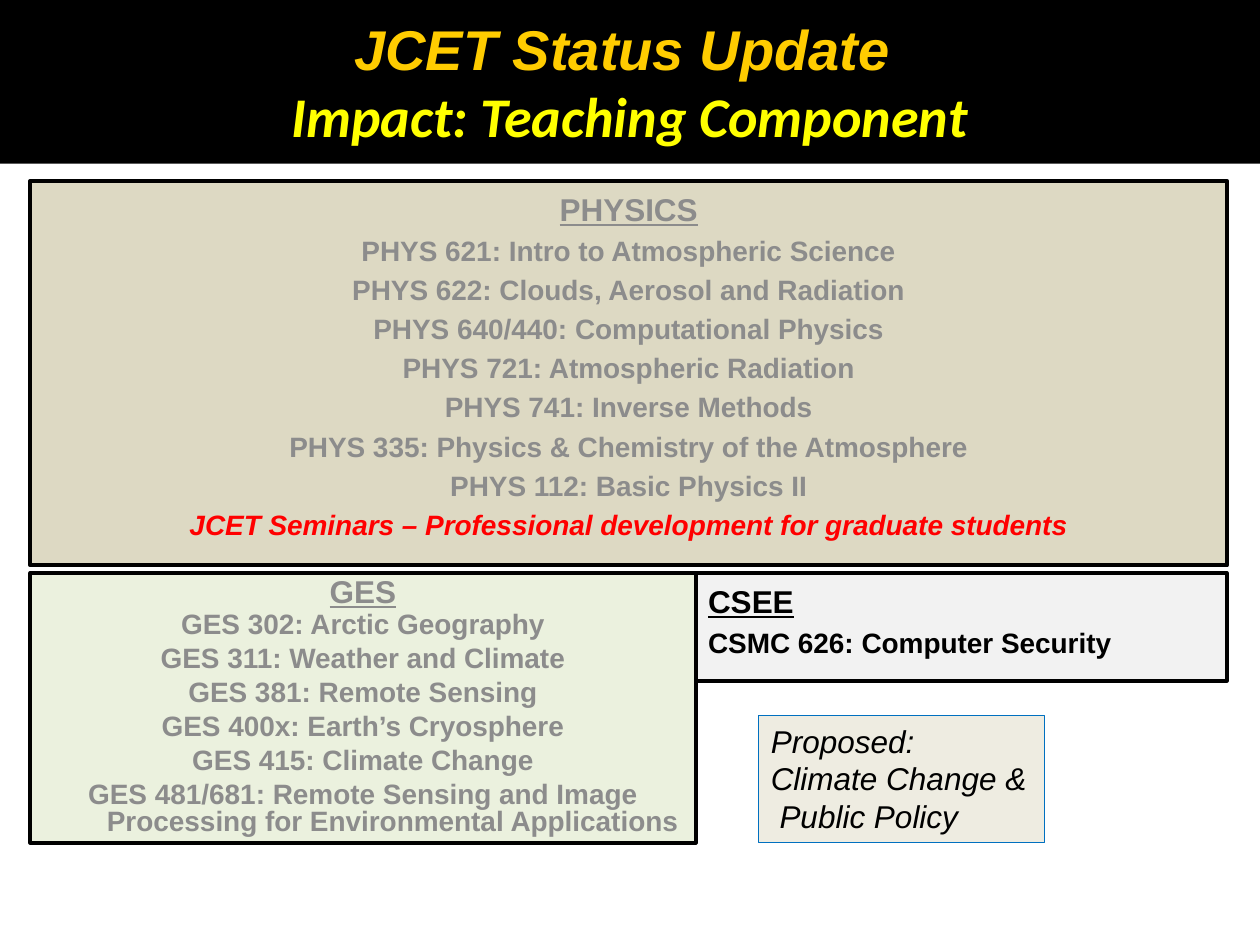
from pptx import Presentation
from pptx.dml.color import RGBColor
from pptx.enum.shapes import MSO_SHAPE
from pptx.enum.text import MSO_ANCHOR, PP_ALIGN
from pptx.util import Pt

RECTANGLE = MSO_SHAPE.RECTANGLE
TOP, MIDDLE = MSO_ANCHOR.TOP, MSO_ANCHOR.MIDDLE
LEFT, CENTER = PP_ALIGN.LEFT, PP_ALIGN.CENTER

BLACK = RGBColor(0x00, 0x00, 0x00)
GOLD = RGBColor(0xFF, 0xCC, 0x00)
YELLOW = RGBColor(0xFF, 0xFF, 0x00)
GRAY = RGBColor(0x8C, 0x8C, 0x8C)
RED = RGBColor(0xFF, 0x00, 0x00)
BLUE = RGBColor(0x00, 0x70, 0xC0)
TAN = RGBColor(0xDD, 0xD9, 0xC3)
GREEN = RGBColor(0xEB, 0xF1, 0xDE)
SILVER = RGBColor(0xF2, 0xF2, 0xF2)
CREAM = RGBColor(0xEE, 0xEC, 0xE1)

PHYSICS_COURSES = [
    "PHYS 621: Intro to Atmospheric Science",
    "PHYS 622: Clouds, Aerosol and Radiation",
    "PHYS 640/440: Computational Physics",
    "PHYS 721: Atmospheric Radiation",
    "PHYS 741: Inverse Methods",
    "PHYS 335: Physics & Chemistry of the Atmosphere",
    "PHYS 112: Basic Physics II",
]
GES_COURSES = [
    "GES 302: Arctic Geography",
    "GES 311: Weather and Climate",
    "GES 381: Remote Sensing",
    "GES 400x: Earth’s Cryosphere",
    "GES 415: Climate Change",
]


def add_panel(slide, box, fill, line=None, line_width=2.25, anchor=TOP, top_inset=3.6):
    """Draw a filled rectangle and return its text frame."""
    panel = slide.shapes.add_shape(RECTANGLE, *map(Pt, box))
    panel.shadow.inherit = False
    panel.fill.solid()
    panel.fill.fore_color.rgb = fill
    if line is None:
        panel.line.fill.background()
    else:
        panel.line.color.rgb = line
        panel.line.width = Pt(line_width)
    frame = panel.text_frame
    frame.word_wrap = True
    frame.vertical_anchor = anchor
    frame.margin_top = Pt(top_inset)
    return frame


def add_text(frame, text, size=16, color=GRAY, font="Arial", bold=True, italic=False,
             underline=False, align=CENTER, before=0, after=0, spacing=1.0, indent=0):
    """Append one formatted paragraph to a text frame."""
    first = frame.paragraphs[0]
    paragraph = frame.add_paragraph() if first.runs else first
    paragraph.alignment = align
    paragraph.space_before = Pt(before)
    paragraph.space_after = Pt(after)
    paragraph.line_spacing = spacing
    if indent:
        properties = paragraph._p.get_or_add_pPr()
        properties.set("marL", str(Pt(indent)))
        properties.set("indent", "0")
    run = paragraph.add_run()
    run.text = text
    run.font.name = font
    run.font.size = Pt(size)
    run.font.bold = bold
    run.font.italic = italic
    run.font.underline = underline
    run.font.color.rgb = color


def add_title(slide, box):
    """Place the black banner with the two title lines."""
    banner = add_panel(slide, box, BLACK, anchor=MIDDLE)
    add_text(banner, "JCET Status Update ", size=32, color=GOLD, italic=True)
    add_text(banner, "Impact: Teaching Component", size=32, color=YELLOW,
             font="Calibri", italic=True)


def add_physics(slide, box):
    """Place the physics course list."""
    physics = add_panel(slide, box, TAN, BLACK, top_inset=5)
    add_text(physics, "PHYSICS", size=18, underline=True)
    for course in PHYSICS_COURSES:
        add_text(physics, course, before=3.2)
    add_text(physics, "JCET Seminars – Professional development for graduate students",
             color=RED, italic=True, before=3.2)


def add_ges(slide, box):
    """Place the GES course list."""
    ges = add_panel(slide, box, GREEN, BLACK)
    add_text(ges, "GES", size=18, underline=True, spacing=0.8)
    for course in GES_COURSES:
        add_text(ges, course, before=2, after=2, spacing=0.8)
    add_text(ges, "GES 481/681: Remote Sensing and Image", before=2, spacing=0.8)
    add_text(ges, "Processing for Environmental Applications", spacing=0.8, indent=34)


def add_csee(slide, box):
    """Place the CSEE course list."""
    csee = add_panel(slide, box, SILVER, BLACK, top_inset=5)
    add_text(csee, "CSEE", size=18, color=BLACK, underline=True, align=LEFT)
    add_text(csee, "CSMC 626: Computer Security", color=BLACK, align=LEFT, before=3.2)


def add_proposal(slide, box):
    """Place the note on the proposed course."""
    proposal = add_panel(slide, box, CREAM, BLUE, line_width=0.75)
    for text, indent in (("Proposed:", 0), ("Climate Change &", 0), ("Public Policy", 5)):
        add_text(proposal, text, size=18, color=BLACK, bold=False, italic=True,
                 align=LEFT, indent=indent)


def main():
    """Build and save the slide."""
    presentation = Presentation()
    presentation.slide_width, presentation.slide_height = Pt(720), Pt(540)
    slide = presentation.slides.add_slide(presentation.slide_layouts[6])
    add_title(slide, (0, 0, 720, 93.6))
    add_physics(slide, (17.3, 103.5, 684, 219.6))
    add_ges(slide, (17.3, 327.5, 380.2, 154))
    add_csee(slide, (397.5, 327.5, 303.5, 61.5))
    add_proposal(slide, (433.4, 408.8, 163.4, 72.7))
    presentation.save("out.pptx")


if __name__ == "__main__":
    main()
